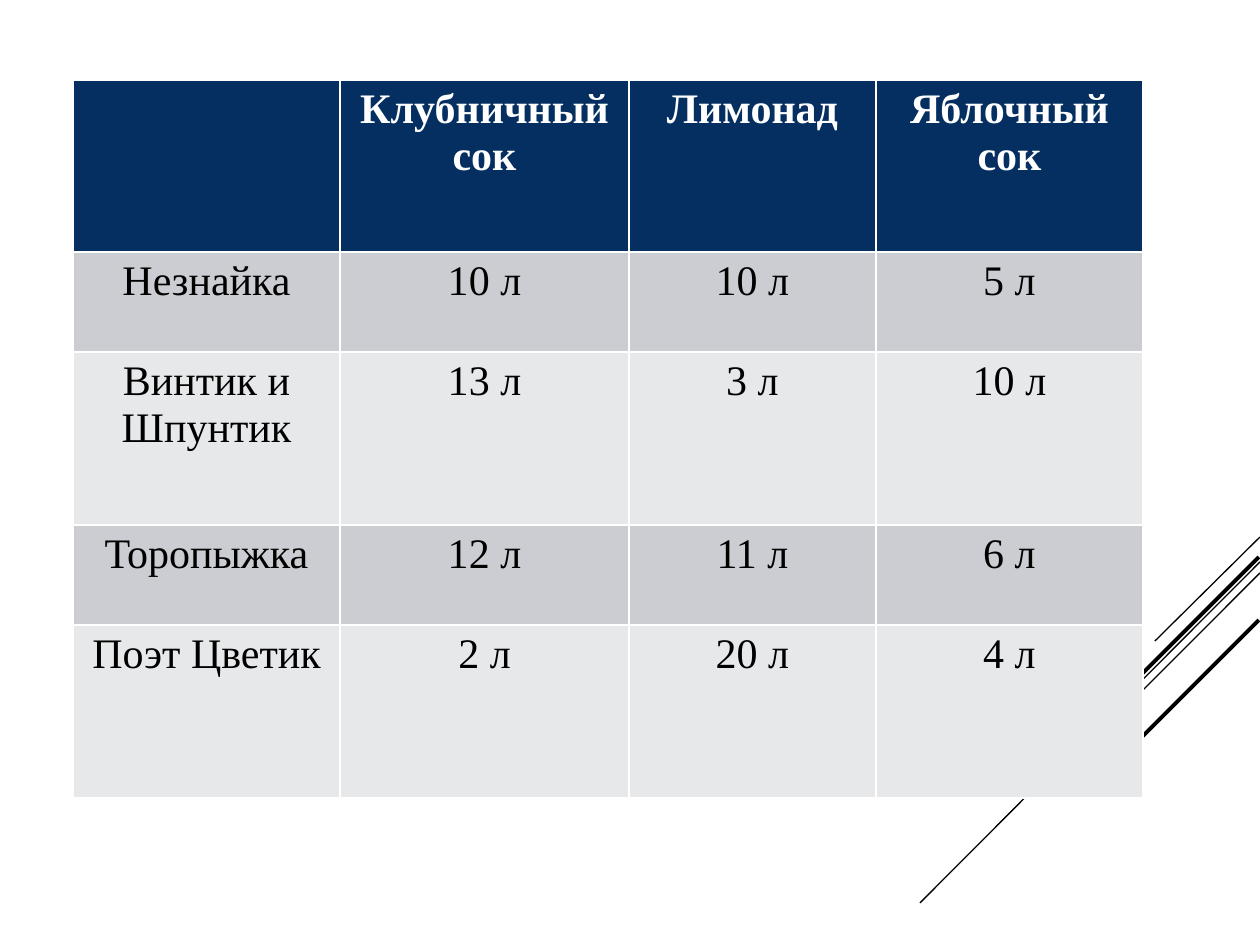
from lxml import etree
from pptx import Presentation
from pptx import util as u
from pptx.dml.color import RGBColor
from pptx.enum import shapes, text
from pptx.oxml.ns import qn

EMU_PER_PX = u.Inches(1) // 126
FONT = "Times New Roman"

WHITE = RGBColor(0xFF, 0xFF, 0xFF)
BLACK = RGBColor(0x00, 0x00, 0x00)
NAVY = RGBColor(0x05, 0x2F, 0x61)
GREY = RGBColor(0xCC, 0xCD, 0xD2)
LIGHT_GREY = RGBColor(0xE7, 0xE8, 0xEA)

HEADER_FORMAT = {"name": FONT, "size": u.Pt(24), "bold": True}
BODY_FORMAT = {**HEADER_FORMAT, "bold": False}

# Diagonal strokes: start x, start y, end x, end y, width in points
STROKES = [
    (1260, 537, 1155, 641, 0.75),
    (1260, 562, 920, 903, 0.75),
    (1260, 573, 1043, 790, 0.75),
    (1259, 557, 1061, 755, 2.25),
    (1259, 620, 1115, 764, 2.25),
]

TABLE_LEFT, TABLE_TOP = 73, 80
COLUMN_WIDTHS = [267, 289, 247, 267]
ROW_HEIGHTS = [172, 100, 173, 100, 173]
JUICE_STOCK = [
    ["", "Клубничный сок", "Лимонад", "Яблочный сок"],
    ["Незнайка", "10 л", "10 л", "5 л"],
    ["Винтик и Шпунтик", "13 л", "3 л", "10 л"],
    ["Торопыжка", "12 л", "11 л", "6 л"],
    ["Поэт Цветик", "2 л", "20 л", "4 л"],
]


def px(length):
    return u.Emu(length * EMU_PER_PX)


def add_stroke(slide, x1, y1, x2, y2, width):
    stroke = slide.shapes.add_connector(
        shapes.MSO_CONNECTOR.STRAIGHT, px(x1), px(y1), px(x2), px(y2))
    stroke.line.color.rgb = BLACK
    stroke.line.width = u.Pt(width)
    etree.SubElement(stroke._element.spPr, qn("a:effectLst"))


def fill_cell(cell, wording, background, color, font_format):
    cell.fill.solid()
    cell.fill.fore_color.rgb = background
    cell.text = wording
    paragraph = cell.text_frame.paragraphs[0]
    paragraph.alignment = text.PP_ALIGN.CENTER
    for run in paragraph.runs:
        for attribute, value in font_format.items():
            setattr(run.font, attribute, value)
        run.font.color.rgb = color


def add_juice_table(slide):
    # The default table style supplies the white cell borders
    table = slide.shapes.add_table(
        len(ROW_HEIGHTS), len(COLUMN_WIDTHS), px(TABLE_LEFT), px(TABLE_TOP),
        px(sum(COLUMN_WIDTHS)), px(sum(ROW_HEIGHTS))).table
    for column, width in zip(table.columns, COLUMN_WIDTHS):
        column.width = px(width)
    for index, (row, height) in enumerate(zip(table.rows, ROW_HEIGHTS)):
        row.height = px(height)
        if index == 0:
            look = NAVY, WHITE, HEADER_FORMAT
        else:
            look = GREY if index % 2 else LIGHT_GREY, BLACK, BODY_FORMAT
        for cell, wording in zip(row.cells, JUICE_STOCK[index]):
            fill_cell(cell, wording, *look)


def main():
    presentation = Presentation()
    presentation.slide_width = px(1260)
    presentation.slide_height = px(945)
    slide = presentation.slides.add_slide(presentation.slide_layouts[6])

    # Corner decoration, behind the table
    for stroke in STROKES:
        add_stroke(slide, *stroke)

    # Juice stock by person
    add_juice_table(slide)

    presentation.save("out.pptx")


if __name__ == "__main__":
    main()
